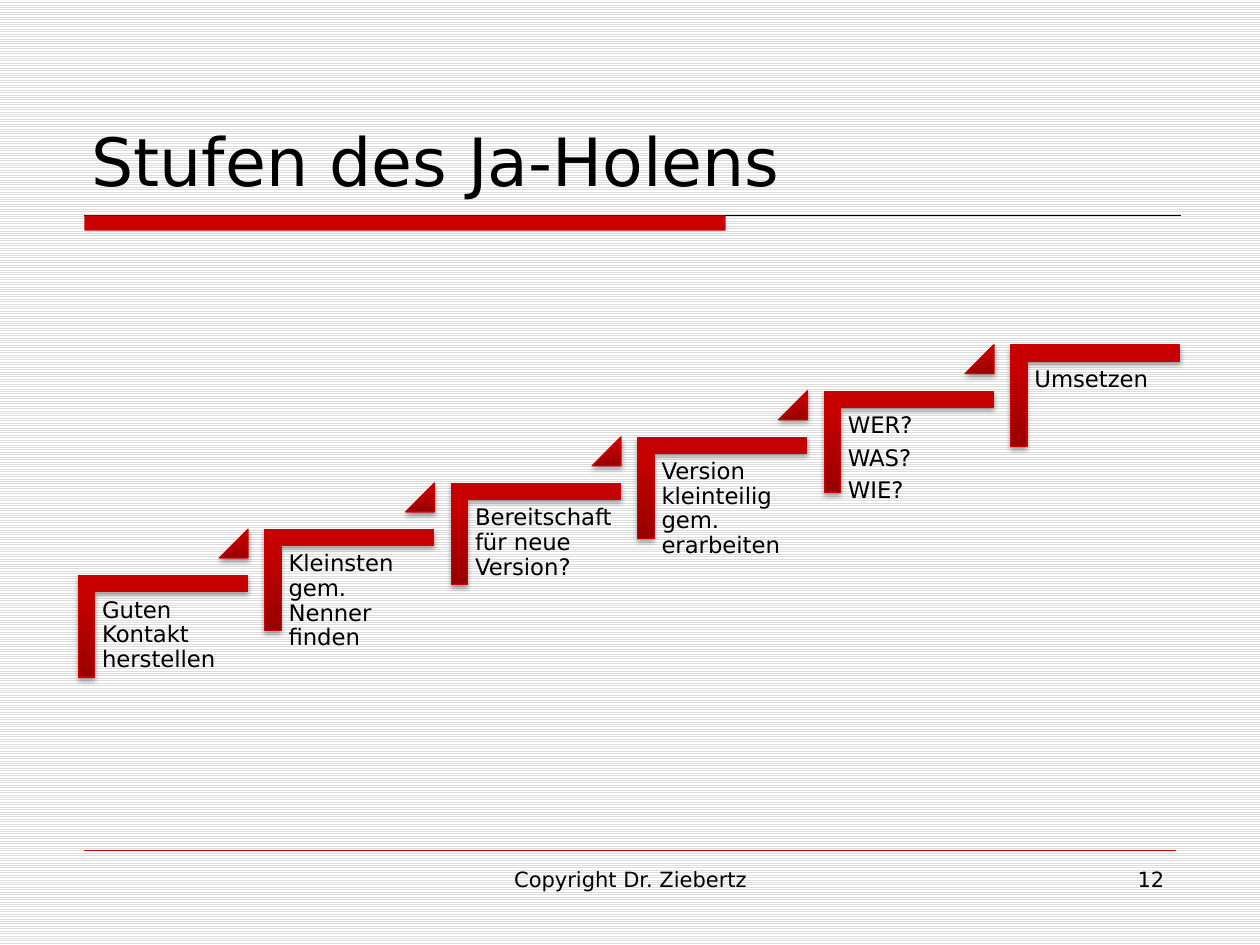
from lxml import etree
from pptx import Presentation
from pptx.dml.color import RGBColor
from pptx.enum import dml, shapes, text
from pptx.oxml import parse_xml
from pptx.util import Pt

FONT = "DejaVu Sans"
RED = "CC0000"
BLACK = "000000"
NS = "http://schemas.openxmlformats.org/drawingml/2006/main"
CORNER = f"""<a:prstGeom xmlns:a="{NS}" prst="corner"><a:avLst>
<a:gd name="adj1" fmla="val 16100"/><a:gd name="adj2" fmla="val 16100"/>
</a:avLst></a:prstGeom>"""
GRADIENT = f"""<a:gradFill xmlns:a="{NS}" rotWithShape="0"><a:gsLst>
<a:gs pos="0"><a:srgbClr val="980000"/></a:gs>
<a:gs pos="80000"><a:srgbClr val="C60000"/></a:gs>
<a:gs pos="100000"><a:srgbClr val="C70000"/></a:gs>
</a:gsLst><a:lin ang="16200000" scaled="0"/></a:gradFill>"""
SHADOW = f"""<a:effectLst xmlns:a="{NS}">
<a:outerShdw blurRad="39370" dist="22860" dir="5400000" rotWithShape="0">
<a:srgbClr val="000000"><a:alpha val="35000"/></a:srgbClr></a:outerShdw></a:effectLst>"""


def color(value):
    return RGBColor.from_string(value)


def add_text(box, lines, size, align=text.PP_ALIGN.LEFT):
    tf = box.text_frame
    tf.word_wrap = True
    tf.auto_size = text.MSO_AUTO_SIZE.NONE
    tf.text = "\n".join(lines)
    for p in tf.paragraphs:
        p.alignment = align
        p.font.name = FONT
        p.font.size = Pt(size)
        p.font.color.rgb = color(BLACK)
    return tf


prs = Presentation()
prs.slide_width, prs.slide_height = Pt(720), Pt(540)
slide = prs.slides.add_slide(prs.slide_layouts[5])

# Background with fine horizontal lines
fill = slide.background.fill
fill.patterned()
fill.pattern = dml.MSO_PATTERN.LIGHT_HORIZONTAL
fill.fore_color.rgb = color("DDDDDD")
fill.back_color.rgb = color("FFFFFF")

# Rules under the title and above the footer
for x1, x2, y, width, line_color in [(48.24, 674.64, 123.12, 0.75, BLACK),
                                     (48.24, 671.76, 486, 0.25, RED)]:
    rule = slide.shapes.add_connector(shapes.MSO_CONNECTOR.STRAIGHT, Pt(x1), Pt(y), Pt(x2), Pt(y))
    rule.line.color.rgb = color(line_color)
    rule.line.width = Pt(width)
    etree.SubElement(rule.element.spPr, f"{{{NS}}}effectLst")

# Red bar under the title
bar = slide.shapes.add_shape(shapes.MSO_SHAPE.RECTANGLE, Pt(48.24), Pt(123.12), Pt(366.48), Pt(8.64))
bar.shadow.inherit = False
bar.fill.solid()
bar.fill.fore_color.rgb = color(RED)
bar.line.fill.background()

# Title
title = slide.shapes.title
title.left, title.top, title.width, title.height = Pt(45), Pt(23.76), Pt(630), Pt(94.32)
tf = add_text(title, ["Stufen des Ja-Holens"], 38)
tf.vertical_anchor = text.MSO_ANCHOR.BOTTOM

# Staircase: each step is a corner, a text and a triangle leading to the next step
steps = [
    ["Guten Kontakt herstellen"],
    ["Kleinsten gem. Nenner finden"],
    ["Bereitschaft für neue Version?"],
    ["Version kleinteilig gem. erarbeiten"],
    ["WER?", "WAS?", "WIE?"],
    ["Umsetzen"],
]
STEP_X, STEP_Y = 106.56, -26.35
for i, lines in enumerate(steps):
    dx, dy = i * STEP_X, i * STEP_Y
    corner = slide.shapes.add_shape(shapes.MSO_SHAPE.RECTANGLE, Pt(64.08 + dx), Pt(309.6 + dy), Pt(57.9), Pt(96.5))
    corner.rotation = 90
    spPr = corner.element.spPr
    spPr.replace(spPr[1], parse_xml(CORNER))
    parts = [corner]
    if i < len(steps) - 1:
        triangle = slide.shapes.add_shape(shapes.MSO_SHAPE.ISOSCELES_TRIANGLE,
                                          Pt(125.28 + dx), Pt(302.4 + dy), Pt(16.5), Pt(16.5))
        triangle.adjustments[0] = 1
        parts.append(triangle)
    for sp in parts:
        sp.line.color.rgb = color(RED)
        sp.line.width = Pt(0.75)
        spPr = sp.element.spPr
        spPr.insert(2, parse_xml(GRADIENT))
        spPr.append(parse_xml(SHADOW))

    box = slide.shapes.add_textbox(Pt(54.72 + dx), Pt(338.4 + dy), Pt(87.12), Pt(76.32))
    tf = add_text(box, lines, 13)
    tf.margin_left = tf.margin_right = tf.margin_top = tf.margin_bottom = Pt(3.6)
    for p in tf.paragraphs:
        p.line_spacing = 0.9
        p.space_after = Pt(4.5)

# Footer and slide number
for left, width, label, align in [(246.24, 228.24, "Copyright Dr. Ziebertz", text.PP_ALIGN.CENTER),
                                  (516.24, 156.24, "12", text.PP_ALIGN.RIGHT)]:
    box = slide.shapes.add_textbox(Pt(left), Pt(491.76), Pt(width), Pt(37.44))
    add_text(box, [label], 12, align)

prs.save("out.pptx")
